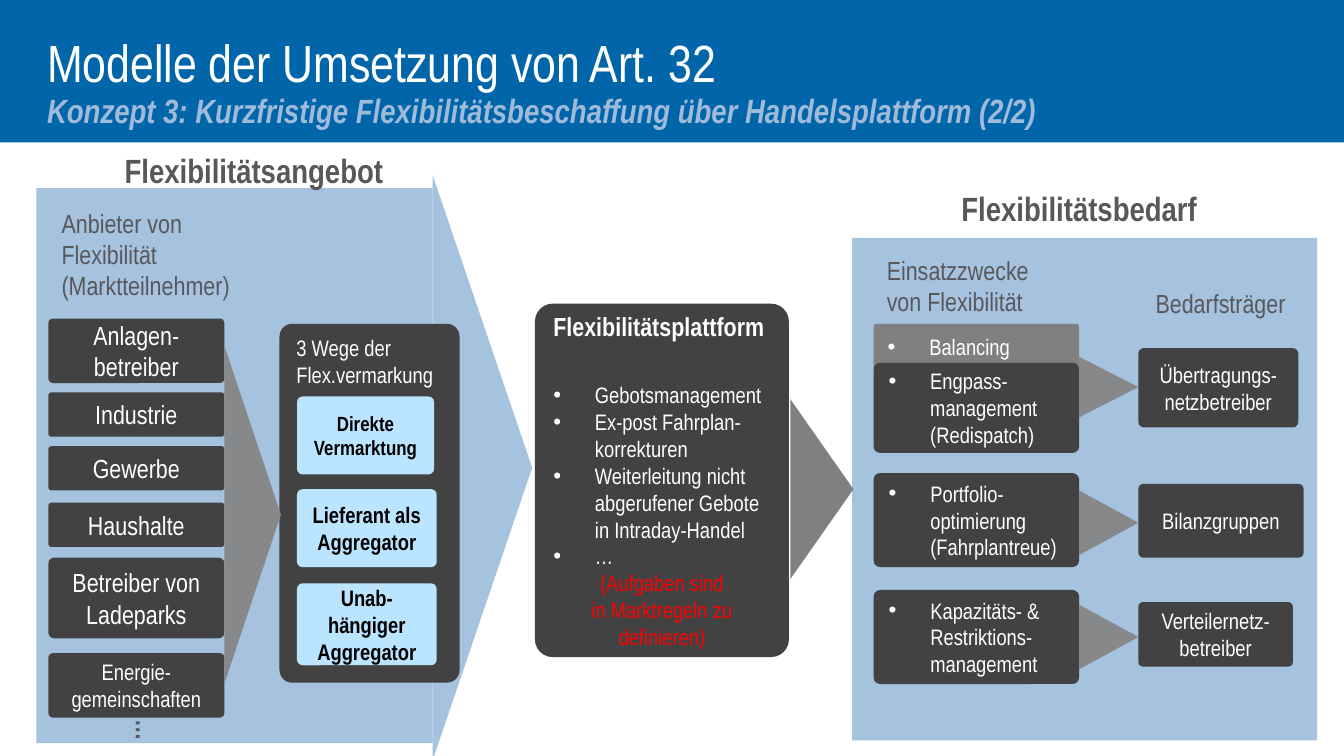
from lxml import etree
from pptx import Presentation
from pptx import util as u
from pptx.dml.color import RGBColor
from pptx.enum import shapes, text
from pptx.oxml.ns import qn

PX = 9144  # 100 px to the inch
FONT = "Arial Narrow"
BLUE, PALE, SKY = "0066A9", "A5C2DF", "BBE4FF"
DARK, GREY, MID = "424243", "808080", "87888A"
WHITE, BLACK, RED, INK, SUBTITLE = "FFFFFF", "000000", "FF0000", "58585A", "A0BADA"

RECT = shapes.MSO_SHAPE.RECTANGLE
ROUND = shapes.MSO_SHAPE.ROUNDED_RECTANGLE
TRIANGLE = shapes.MSO_SHAPE.ISOSCELES_TRIANGLE
LEFT, CENTER = text.PP_ALIGN.LEFT, text.PP_ALIGN.CENTER
TOP, MIDDLE = text.MSO_ANCHOR.TOP, text.MSO_ANCHOR.MIDDLE

# Content: boxes are (left, top, width, height)
title_lines = [
    ("Modelle der Umsetzung von Art. 32", dict(size=28, color=WHITE)),
    ("Konzept 3: Kurzfristige Flexibilitätsbeschaffung über Handelsplattform (2/2)",
     dict(size=18, color=SUBTITLE, bold=True, italic=True)),
]
panels = [(27, 140, 295, 413), (634, 177, 346, 374)]
# Right-pointing triangles: left, middle height, width, height, fill
offer_tip = (322, 348, 74, 435, PALE)
platform_tip = (588, 364, 47, 134, GREY)
small_tips = [
    (167, 383, 42, 251, MID),
    (803, 288, 44, 45, MID),
    (803, 389, 44, 48, MID),
    (803, 474, 44, 48, MID),
]
headings = [
    ("Flexibilitätsangebot", (55, 107, 268, 40)),
    ("Flexibilitätsbedarf", (669, 135, 268, 40)),
]
captions = [
    ("Anbieter von Flexibilität (Marktteilnehmer)", (36, 149, 172, 81)),
    ("Einsatzzwecke von Flexibilität", (650, 184, 144, 57)),
    ("Bedarfsträger", (850, 209, 123, 34)),
]
providers = [  # text, top, height, size
    ("Anlagen-\nbetreiber", 237, 48, 14),
    ("Industrie", 292, 33, 14),
    ("Gewerbe", 332, 33, 14),
    ("Haushalte", 374, 33, 14),
    ("Betreiber von Ladeparks", 415, 60, 14),
    ("Energie-gemeinschaften", 486, 48, 12),
]
marketing_ways = [  # text, top, width, height, size
    ("Direkte Vermarktung", 295, 102, 58, 11),
    ("Lieferant als\nAggregator", 364, 104, 58, 12),
    ("Unab-hängiger\nAggregator", 434, 104, 61, 12),
]
platform_tasks = [
    "Gebotsmanagement",
    "Ex-post Fahrplan-korrekturen",
    "Weiterleitung nicht abgerufener Gebote in Intraday-Handel",
    "…",
]
platform_note = ["(Aufgaben sind", "in Marktregeln zu definieren)"]
purposes = [  # text, top, height, fill
    ("Balancing", 241, 34, GREY),
    ("Engpass-management (Redispatch)", 270, 67, DARK),
    ("Portfolio-\noptimierung\n(Fahrplantreue)", 352, 70, DARK),
    ("Kapazitäts- & Restriktions-management", 439, 70, DARK),
]
users = [  # text, top, width, height
    ("Übertragungs-netzbetreiber", 259, 119, 59),
    ("Bilanzgruppen", 360, 123, 55),
    ("Verteilernetz-betreiber", 448, 115, 48),
]


def rgb(color):
    return RGBColor.from_string(color)


def emu(box):
    return [u.Emu(int(v * PX)) for v in box]


def add_runs(paragraph, words, size, color, bold=False, italic=False):
    for i, line in enumerate(words.split("\n")):
        if i:
            paragraph.add_line_break()
        run = paragraph.add_run()
        run.text = line
        font = run.font
        font.name, font.size, font.color.rgb = FONT, u.Pt(size), rgb(color)
        font.bold, font.italic = bold, italic


def write(frame, words, size, color, align=CENTER, bold=False, bullet=False, before=0):
    """Add one paragraph, using the empty first one if it is still free."""
    first = frame.paragraphs[0]
    paragraph = frame.add_paragraph() if first.runs else first
    paragraph.alignment = align
    if before:
        paragraph.space_before = u.Pt(before)
    if bullet:
        props = paragraph._p.get_or_add_pPr()
        props.set("marL", str(31 * PX))
        props.set("indent", str(-31 * PX))
        etree.SubElement(props, qn("a:buFont")).set("typeface", "Arial")
        etree.SubElement(props, qn("a:buChar")).set("char", "•")
    add_runs(paragraph, words, size, color, bold)


def block(kind, box, fill, anchor=MIDDLE):
    shape = slide.shapes.add_shape(kind, *emu(box))
    shape.shadow.inherit = False
    shape.fill.solid()
    shape.fill.fore_color.rgb = rgb(fill)
    shape.line.fill.background()
    if kind == ROUND:
        shape.adjustments[0] = 0.07
    shape.text_frame.word_wrap = True
    shape.text_frame.vertical_anchor = anchor
    return shape


def card(words, box, size=12, fill=DARK, color=WHITE, anchor=MIDDLE, **style):
    write(block(ROUND, box, fill, anchor).text_frame, words, size, color, **style)


def pointer(left, middle, width, height, fill):
    box = (left + (width - height) / 2, middle - width / 2, height, width)
    block(TRIANGLE, box, fill).rotation = 90


def label(words, box, size, align=LEFT, bold=False):
    area = slide.shapes.add_textbox(*emu(box))
    area.text_frame.word_wrap = True
    write(area.text_frame, words, size, INK, align, bold)
    return area


prs = Presentation()
prs.slide_width, prs.slide_height = emu((1000, 562.5))
slide = prs.slides.add_slide(prs.slide_layouts[5])

# Header band with the title in front of it
block(RECT, (0, 0, 1000, 106), BLUE)
title = slide.shapes.title
slide.shapes._spTree.append(title._element)
title.left, title.top, title.width, title.height = emu((35, 45, 787, 39))
heading = title.text_frame
heading.word_wrap = True
heading.auto_size = text.MSO_AUTO_SIZE.NONE
heading.vertical_anchor = MIDDLE
heading.margin_left = heading.margin_top = heading.margin_right = 0
heading.margin_bottom = 4 * PX
title_paragraph = heading.paragraphs[0]
title_paragraph.alignment = LEFT
title_paragraph.line_spacing = 0.9
for i, (words, style) in enumerate(title_lines):
    if i:
        title_paragraph.add_line_break()
    add_runs(title_paragraph, words, **style)

# Background areas
for panel in panels:
    block(RECT, panel, PALE)
pointer(*offer_tip)
pointer(*platform_tip)

# Headings and captions
for words, box in headings:
    label(words, box, 18, CENTER, True)
for words, box in captions:
    label(words, box, 14)

# Offer side: providers and ways to market
for words, top, height, size in providers:
    card(words, (36, top, 131, height), size)
label("…", (91, 526, 35, 34), 14, bold=True).rotation = 90
card("3 Wege der\nFlex.vermarkung", (208, 241, 134, 267), anchor=TOP, align=LEFT)
for words, top, width, height, size in marketing_ways:
    card(words, (221, top, width, height), size, SKY, BLACK, bold=True)

# Platform
platform = block(ROUND, (398, 226, 189, 263), DARK).text_frame
write(platform, "Flexibilitätsplattform", 14, WHITE, LEFT, True)
for i, task in enumerate(platform_tasks):
    write(platform, task, 12, WHITE, LEFT, bullet=True, before=0 if i else 21)
for note in platform_note:
    write(platform, note, 12, RED)

# Demand side: purposes and users
for words, top, height, fill in purposes:
    card(words, (650, top, 153, height), fill=fill, align=LEFT, bullet=True)
for words, top, width, height in users:
    card(words, (847, top, width, height))
for tip in small_tips:
    pointer(*tip)

prs.save("out.pptx")
